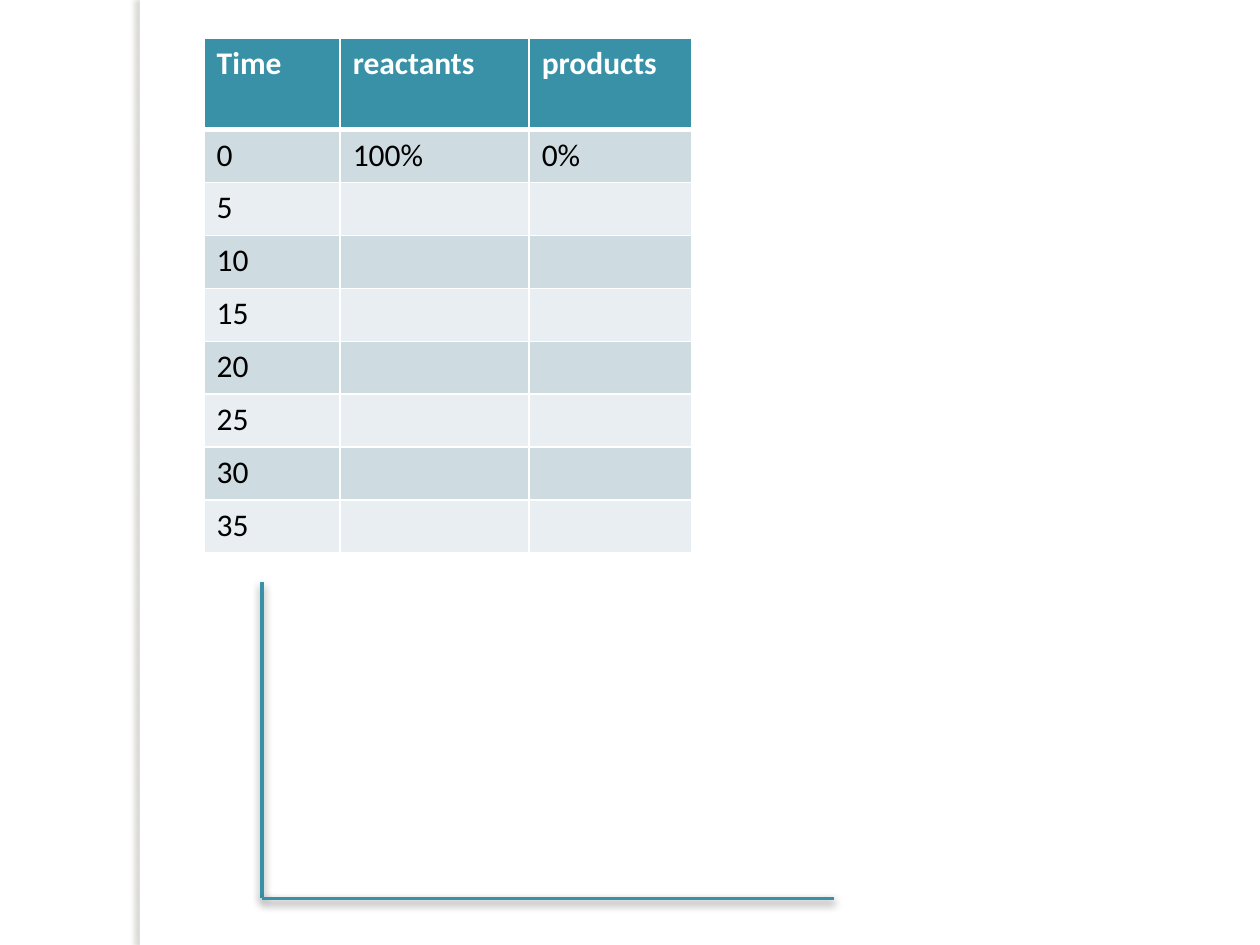
from lxml import etree
from pptx import Presentation
from pptx.dml.color import RGBColor
from pptx.enum.shapes import MSO_CONNECTOR, MSO_SHAPE
from pptx.oxml.ns import qn
from pptx.util import Inches, Pt

STRAIGHT = MSO_CONNECTOR.STRAIGHT
RECTANGLE = MSO_SHAPE.RECTANGLE

COLORS = {
    "teal": "3891A7",
    "dark_band": "CEDCE1",
    "light_band": "E8EEF1",
    "white": "FFFFFF",
    "black": "000000",
    "strip_shadow": "736F63",
}
FONT = "Calibri"

HEADERS = ["Time", "reactants", "products"]
FIRST_RESULTS = ["100%", "0%"]
TIMES = range(0, 40, 5)
ROWS = [HEADERS] + [
    [str(time)] + (FIRST_RESULTS if time == 0 else ["", ""]) for time in TIMES
]

TABLE_LEFT, TABLE_TOP = 1.62, 0.3
COLUMN_WIDTHS = [1.08, 1.5, 1.29]
HEADER_HEIGHT, ROW_HEIGHT = 0.73, 0.42

ORIGIN = (2.08, 7.13)
Y_AXIS_END = (2.08, 4.62)
X_AXIS_END = (6.62, 7.13)


def rgb(name):
    return RGBColor.from_string(COLORS[name])


def add_shadow(shape, color, opacity, blur, distance, direction):
    """Append an outer shadow; opacity in percent, lengths in points, direction in degrees."""
    effects = etree.SubElement(shape._element.spPr, qn("a:effectLst"))
    shadow = etree.SubElement(
        effects, qn("a:outerShdw"), blurRad=str(Pt(blur)), dist=str(Pt(distance)),
        dir=str(direction * 60000), algn="ctr", rotWithShape="0")
    shadow_color = etree.SubElement(shadow, qn("a:srgbClr"), val=COLORS[color])
    etree.SubElement(shadow_color, qn("a:alpha"), val=str(opacity * 1000))


def add_borders(cell, top, bottom):
    """Draw white cell borders; side lines are 1 pt, top and bottom as given."""
    properties = cell._tc.get_or_add_tcPr()
    for side, width in (("L", 1), ("R", 1), ("T", top), ("B", bottom)):
        line = etree.SubElement(properties, qn(f"a:ln{side}"), w=str(Pt(width)))
        fill = etree.SubElement(line, qn("a:solidFill"))
        etree.SubElement(fill, qn("a:srgbClr"), val=COLORS["white"])


def add_side_strip(slide):
    strip = slide.shapes.add_shape(
        RECTANGLE, Inches(1.11), Inches(0), Inches(0.08), Inches(7.5))
    strip.fill.solid()
    strip.fill.fore_color.rgb = rgb("white")
    strip.line.fill.background()
    add_shadow(strip, "strip_shadow", 25, 3, 3, 180)


def add_results_table(slide):
    heights = [HEADER_HEIGHT] + [ROW_HEIGHT] * len(TIMES)
    table = slide.shapes.add_table(
        len(ROWS), len(HEADERS), Inches(TABLE_LEFT), Inches(TABLE_TOP),
        Inches(sum(COLUMN_WIDTHS)), Inches(sum(heights))).table
    for column, width in zip(table.columns, COLUMN_WIDTHS):
        column.width = Inches(width)
    for row_index, (texts, height) in enumerate(zip(ROWS, heights)):
        table.rows[row_index].height = Inches(height)
        is_header = row_index == 0
        band = "teal" if is_header else "dark_band" if row_index % 2 else "light_band"
        for column_index, text in enumerate(texts):
            cell = table.cell(row_index, column_index)
            add_borders(cell, top=3 if row_index == 1 else 1, bottom=3 if is_header else 1)
            cell.fill.solid()
            cell.fill.fore_color.rgb = rgb(band)
            cell.text_frame.text = text
            font = cell.text_frame.paragraphs[0].font
            for run in cell.text_frame.paragraphs[0].runs:
                font = run.font
            font.name = FONT
            font.size = Pt(18)
            font.bold = is_header
            font.color.rgb = rgb("white" if is_header else "black")


def add_axis(slide, start, end):
    axis = slide.shapes.add_connector(STRAIGHT, *map(Inches, start + end))
    axis.line.color.rgb = rgb("teal")
    axis.line.width = Pt(2)
    add_shadow(axis, "black", 43, 5, 2, 90)


def main():
    presentation = Presentation()
    presentation.slide_width = Inches(10)
    presentation.slide_height = Inches(7.5)
    slide = presentation.slides.add_slide(presentation.slide_layouts[6])
    slide.background.fill.solid()
    slide.background.fill.fore_color.rgb = rgb("white")
    add_side_strip(slide)
    add_results_table(slide)
    add_axis(slide, Y_AXIS_END, ORIGIN)
    add_axis(slide, ORIGIN, X_AXIS_END)
    presentation.save("out.pptx")


if __name__ == "__main__":
    main()
